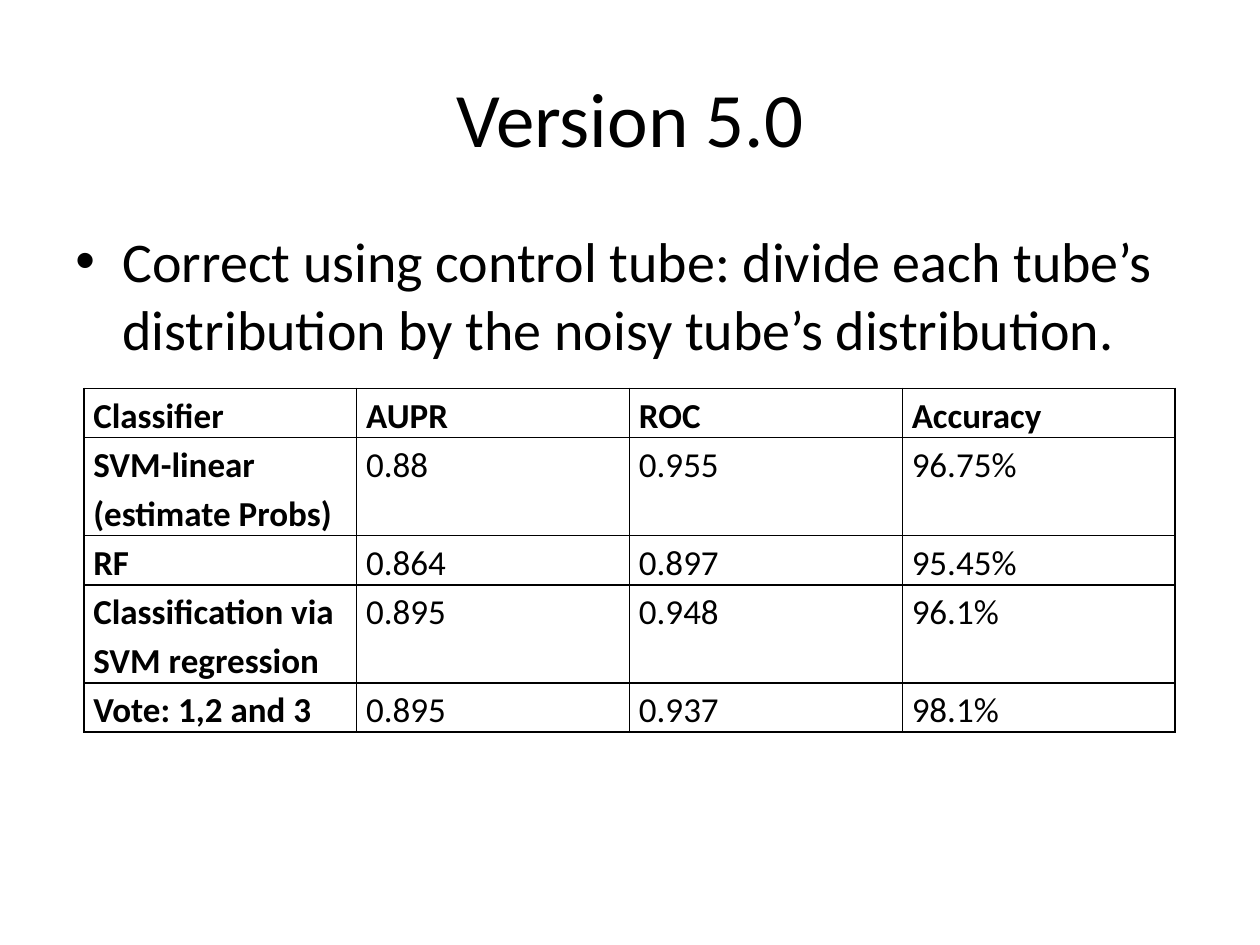
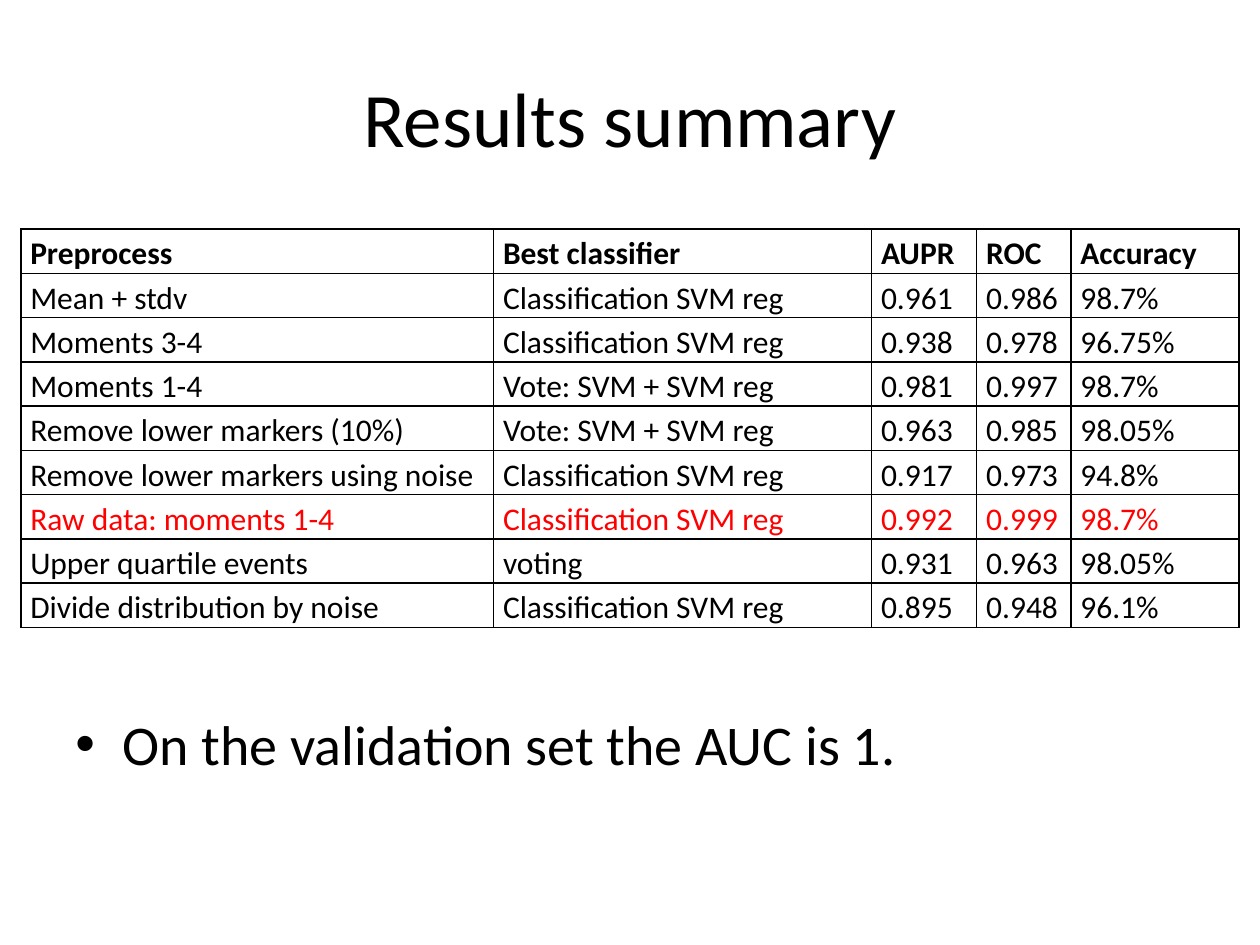
from pptx import Presentation
from pptx.dml.color import RGBColor as RGB
from pptx.enum.text import MSO_ANCHOR as ANCHOR, PP_ALIGN as ALIGN
from pptx.oxml.ns import qn
from pptx.util import Cm, Pt
from lxml.etree import SubElement

COLORS = {"text": "000000", "border": "000000", "highlight": "FF0000", "page": "FFFFFF"}
FONT = "Calibri"
TITLE_ONLY = 5
MARGIN, CONTENT_W = 1.27, 22.86
LINE_SPACING = 1.15

VERSION_ROWS = [
    ("Classifier", "AUPR", "ROC", "Accuracy"),
    ("SVM-linear (estimate Probs)", "0.88", "0.955", "96.75%"),
    ("RF", "0.864", "0.897", "95.45%"),
    ("Classification via SVM regression", "0.895", "0.948", "96.1%"),
    ("Vote: 1,2 and 3", "0.895", "0.937", "98.1%"),
]
SVM_REG = "Classification SVM reg"
SVM_VOTE = "Vote: SVM + SVM reg"
SUMMARY_ROWS = [
    ("Preprocess", "Best classifier", "AUPR", "ROC", "Accuracy"),
    ("Mean + stdv", SVM_REG, "0.961", "0.986", "98.7%"),
    ("Moments 3-4", SVM_REG, "0.938", "0.978", "96.75%"),
    ("Moments 1-4", SVM_VOTE, "0.981", "0.997", "98.7%"),
    ("Remove lower markers (10%)", SVM_VOTE, "0.963", "0.985", "98.05%"),
    ("Remove lower markers using noise", SVM_REG, "0.917", "0.973", "94.8%"),
    ("Raw data: moments 1-4", SVM_REG, "0.992", "0.999", "98.7%"),
    ("Upper quartile events", "voting", "0.931", "0.963", "98.05%"),
    ("Divide distribution by noise", SVM_REG, "0.895", "0.948", "96.1%"),
]


def set_attrs(obj, values):
    for name, value in values.items():
        setattr(obj, name, value)


class Deck:
    def __init__(self):
        self.prs = Presentation()
        set_attrs(self.prs, {"slide_width": Cm(25.4), "slide_height": Cm(19.05)})
        self.s = None

    def add_text(self, p, text, size, color="text", bold=False):
        r = p.add_run()
        r.text = text
        set_attrs(r.font, {"name": FONT, "size": Pt(size), "bold": bold})
        r.font.color.rgb = RGB.from_string(COLORS[color])

    def slide(self, title):
        self.s = self.prs.slides.add_slide(self.prs.slide_layouts[TITLE_ONLY])
        fill = self.s.background.fill
        fill.solid()
        fill.fore_color.rgb = RGB.from_string(COLORS["page"])
        sp = self.s.shapes.title
        set_attrs(sp, {"left": Cm(MARGIN), "top": Cm(0.76),
                       "width": Cm(CONTENT_W), "height": Cm(3.18)})
        tf = sp.text_frame
        tf.vertical_anchor = ANCHOR.MIDDLE
        p = tf.paragraphs[0]
        p.alignment = ALIGN.CENTER
        self.add_text(p, title, 44)

    def bullet(self, text, top, height):
        sp = self.s.shapes.add_textbox(Cm(MARGIN), Cm(top), Cm(CONTENT_W), Cm(height))
        tf = sp.text_frame
        tf.word_wrap = True
        p = tf.paragraphs[0]
        pPr = p._p.get_or_add_pPr()
        indent = Cm(0.95)
        pPr.set("marL", str(indent))
        pPr.set("indent", str(-indent))
        SubElement(SubElement(pPr, qn("a:spcBef")), qn("a:spcPct"), val="20000")
        SubElement(pPr, qn("a:buFont"), typeface="Arial")
        SubElement(pPr, qn("a:buChar"), char="•")
        self.add_text(p, text, 32)

    def border(self, cell):
        tcPr = cell._tc.get_or_add_tcPr()
        for side in ("lnL", "lnR", "lnT", "lnB"):
            ln = SubElement(tcPr, qn(f"a:{side}"), w=str(Pt(1)))
            fill = SubElement(ln, qn("a:solidFill"))
            SubElement(fill, qn("a:srgbClr"), val=COLORS["border"])

    def table(self, rows, left, top, col_widths, row_heights, size,
              bold_first_col=False, highlight_row=None):
        """Draw a bordered table whose first row is a bold header."""
        frame = self.s.shapes.add_table(len(rows), len(col_widths), Cm(left), Cm(top),
                                        Cm(sum(col_widths)), Cm(sum(row_heights)))
        tbl = frame.table
        set_attrs(tbl, {"first_row": False, "horz_banding": False})
        for col, width in zip(tbl.columns, col_widths):
            col.width = Cm(width)
        for row, height in zip(tbl.rows, row_heights):
            row.height = Cm(height)
        for i, row in enumerate(rows):
            color = "highlight" if i == highlight_row else "text"
            for j, text in enumerate(row):
                cell = tbl.cell(i, j)
                set_attrs(cell, {"margin_left": Cm(0.19), "margin_right": Cm(0.19),
                                 "margin_top": 0, "margin_bottom": 0})
                self.border(cell)
                cell.fill.background()
                p = cell.text_frame.paragraphs[0]
                p.line_spacing = LINE_SPACING
                bold = i == 0 or (bold_first_col and j == 0)
                self.add_text(p, text, size, color, bold)


def main():
    deck = Deck()

    deck.slide("Version 5.0")
    deck.bullet("Correct using control tube: divide each tube’s distribution "
                "by the noisy tube’s distribution.", 4.45, 12.57)
    line = 0.99
    deck.table(VERSION_ROWS, 1.69, 7.83, [5.5] * 4,
               [line * n for n in (1, 2, 1, 2, 1)], 20, bold_first_col=True)

    deck.slide("Results summary")
    deck.table(SUMMARY_ROWS, 0.42, 4.62, [9.53, 7.62, 2.12, 1.9, 3.39],
               [0.89] * len(SUMMARY_ROWS), 18, highlight_row=6)
    deck.bullet("On the validation set the AUC is 1.", 14.18, 4.5)

    deck.prs.save("out.pptx")


if __name__ == "__main__":
    main()
